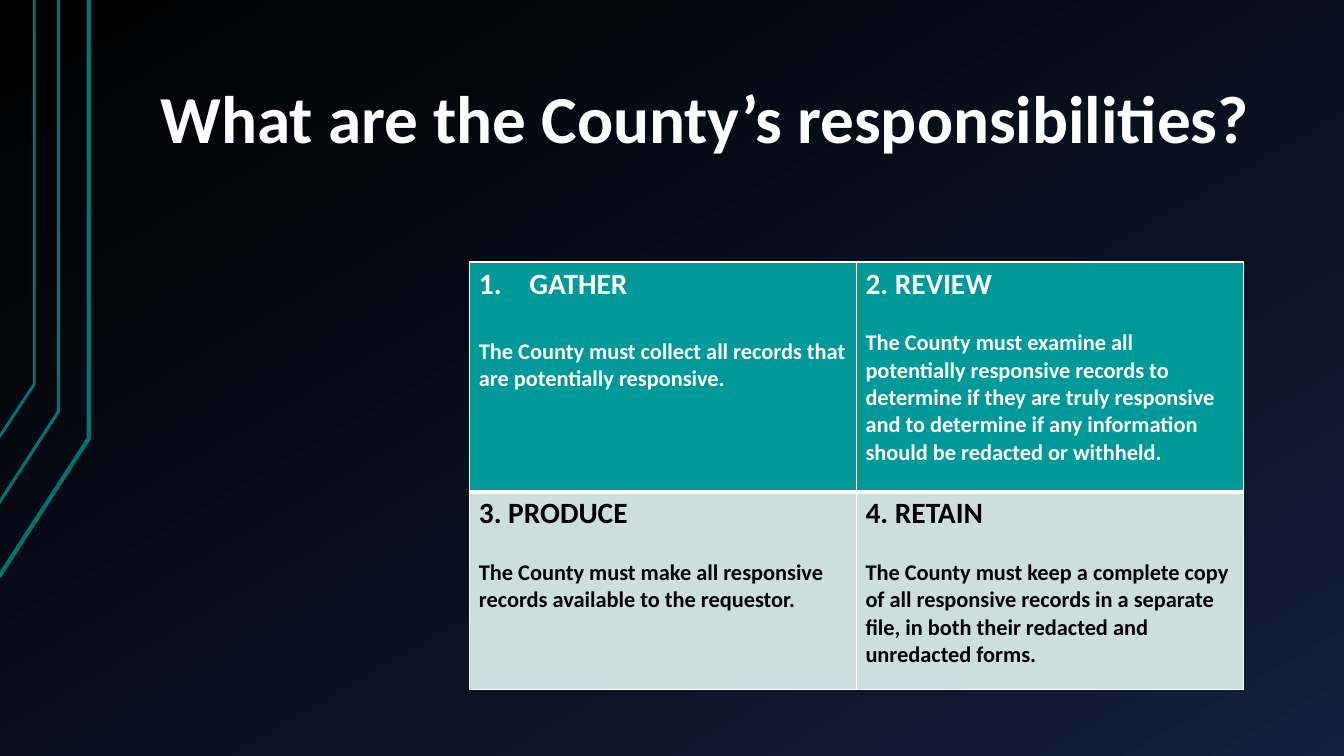
from copy import deepcopy

from lxml.etree import SubElement
from pptx import Presentation
from pptx.dml.color import RGBColor as Rgb
from pptx.enum.text import MSO_ANCHOR as Anchor, PP_ALIGN as Align
from pptx.oxml import parse_xml
from pptx.oxml.ns import nsdecls, qn
from pptx.util import Inches, Pt

THEME = {
    "font": "Calibri",
    "title_size": 48, "heading_size": 21, "body_size": 16,
    "light": "FFFFFF", "dark": "000000", "accent": "007373",
    "row_fills": ("009999", "CCDEDE"),
    "backdrop": ((0, "000000"), (0.85, "0F1931"), (1, "142242")),
}
LINE_HEIGHT = 1.22
DUTIES = [
    [("GATHER", "The County must collect all records that are potentially responsive."),
     ("2. REVIEW", "The County must examine all potentially responsive records to determine if "
                   "they are truly responsive and to determine if any information should be "
                   "redacted or withheld.")],
    [("3. PRODUCE", "The County must make all responsive records available to the requestor."),
     ("4. RETAIN", "The County must keep a complete copy of all responsive records in a separate "
                   "file, in both their redacted and unredacted forms.")],
]


def write(paragraph, text, size, color):
    """Put one bold run in the theme font into a paragraph."""
    run = paragraph.add_run()
    run.text = text
    for key, value in {"name": THEME["font"], "size": Pt(size), "bold": True}.items():
        setattr(run.font, key, value)
    run.font.color.rgb = Rgb.from_string(color)


def border(cell, side, width):
    """Draw one side of a cell; call in the order L, R, T, B, before the fill."""
    cell._tc.get_or_add_tcPr().append(parse_xml(
        f'<a:ln{side} {nsdecls("a")} w="{Pt(width)}"><a:solidFill>'
        f'<a:srgbClr val="{THEME["light"]}"/></a:solidFill></a:ln{side}>'))


deck = Presentation()
deck.slide_width, deck.slide_height = Inches(13.33), Inches(7.5)
slide = deck.slides.add_slide(deck.slide_layouts[6])

# Backdrop
backdrop = slide.background.fill
backdrop.gradient()
backdrop.gradient_angle = 300
stop_list = slide.element.find(".//" + qn("a:gsLst"))
stop_list.append(deepcopy(stop_list[-1]))
for stop, (position, color) in zip(backdrop.gradient_stops, THEME["backdrop"]):
    stop.position = position
    stop.color.rgb = Rgb.from_string(color)

# Bent rails down the left edge: rail x, bend y, foot y, width
for x, bend, foot, width in [(0.88, 4.35, 5.72, 3), (0.58, 4.08, 4.99, 2.25), (0.34, 3.81, 4.34, 2)]:
    outline = slide.shapes.build_freeform(Inches(-0.01), Inches(foot))
    outline.add_line_segments([(Inches(x), Inches(bend)), (Inches(x), 0)], close=False)
    rail = outline.convert_to_shape()
    rail.shadow.inherit = False
    rail.fill.background()
    rail.line.color.rgb = Rgb.from_string(THEME["accent"])
    rail.line.width = Pt(width)

# Title
title = slide.shapes.add_textbox(Inches(1.33), Inches(0.3), Inches(11.33), Inches(1.34)).text_frame
for key, value in {"word_wrap": True, "vertical_anchor": Anchor.BOTTOM,
                   "margin_left": Inches(0.13), "margin_right": Inches(0.13),
                   "margin_top": Inches(0.07), "margin_bottom": Inches(0.07)}.items():
    setattr(title, key, value)
question = title.paragraphs[0]
question.alignment, question.line_spacing = Align.CENTER, 0.9
write(question, "What are the County’s responsibilities?", THEME["title_size"], THEME["light"])

# Table of duties
duties = slide.shapes.add_table(2, 2, Inches(4.66), Inches(2.6), Inches(7.67), Inches(4.24)).table
for row, height in zip(duties.rows, (2.28, 1.96)):
    row.height = Inches(height)
for r, row in enumerate(DUTIES):
    ink = THEME["dark"] if r else THEME["light"]
    for c, (name, duty) in enumerate(row):
        cell = duties.cell(r, c)
        for key, value in {"margin_left": Inches(0.09), "margin_right": Inches(0.09),
                           "margin_top": Inches(0.04), "margin_bottom": Inches(0.04)}.items():
            setattr(cell, key, value)
        for side, width in zip("LRTB", (1, 1, 3 if r else 1, 1 if r else 3)):
            border(cell, side, width)
        cell.fill.solid()
        cell.fill.fore_color.rgb = Rgb.from_string(THEME["row_fills"][r])

        numbered = name == "GATHER"
        heading = cell.text_frame.paragraphs[0]
        gap = THEME["heading_size"] if numbered else THEME["body_size"]
        heading.space_after = Pt(round(gap * LINE_HEIGHT, 1))
        if numbered:
            layout = heading._p.get_or_add_pPr()
            layout.set("marL", str(Inches(0.5)))
            layout.set("indent", str(Inches(-0.5)))
            SubElement(layout, qn("a:buFont"), typeface="+mj-lt")
            SubElement(layout, qn("a:buAutoNum"), type="arabicPeriod")
        write(heading, name, THEME["heading_size"], ink)
        write(cell.text_frame.add_paragraph(), duty, THEME["body_size"], ink)

deck.save("out.pptx")
